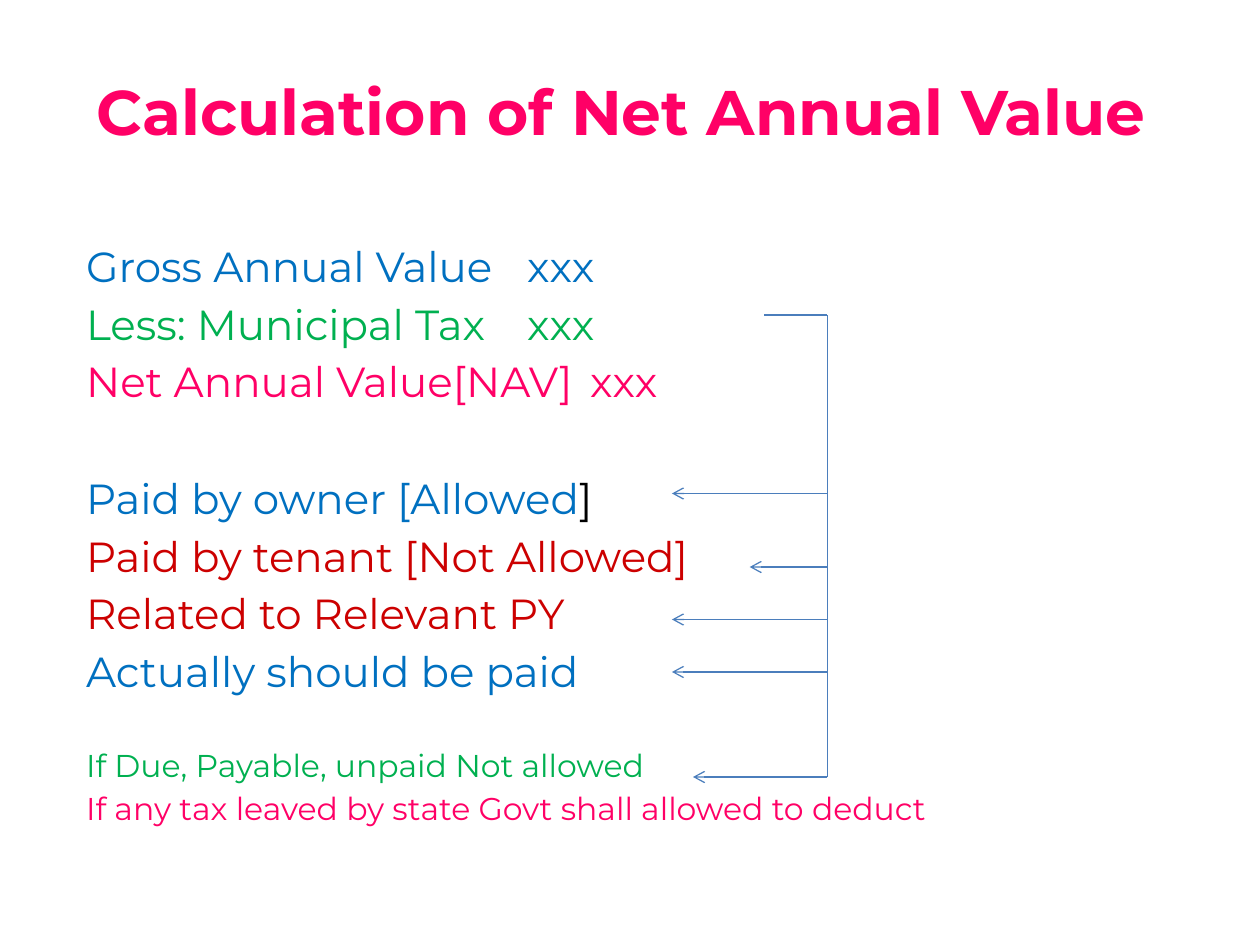
from pptx import Presentation
from pptx.dml.color import RGBColor
from pptx.enum.shapes import MSO_CONNECTOR
from pptx.enum.text import MSO_ANCHOR, MSO_AUTO_SIZE, PP_ALIGN
from pptx.oxml.ns import qn
from pptx.util import Inches, Pt
from lxml import etree

STRAIGHT = MSO_CONNECTOR.STRAIGHT
MIDDLE, TOP = MSO_ANCHOR.MIDDLE, MSO_ANCHOR.TOP
NO_FIT = MSO_AUTO_SIZE.NONE
CENTER, LEFT = PP_ALIGN.CENTER, PP_ALIGN.LEFT

COLUMNS, ROWS = 120, 90
PINK, BLUE, GREEN, RED, BLACK = "FF0066", "0070C0", "00B050", "CC0000", "000000"
BRACKET_BLUE = "4B7EBC"


def colour(value):
    return RGBColor.from_string(value)


def apply(target, values):
    for attribute, value in values.items():
        setattr(target, attribute, value)


class SlideBuilder:
    font_name = "Montserrat"
    line_width = Pt(0.75)

    def __init__(self, deck):
        self.column = deck.slide_width / COLUMNS
        self.row = deck.slide_height / ROWS
        self.slide = deck.slides.add_slide(deck.slide_layouts[1])

    def x(self, columns):
        return round(columns * self.column)

    def y(self, rows):
        return round(rows * self.row)

    def place(self, holder, left, top, width, height, anchor):
        apply(holder, {"left": self.x(left), "top": self.y(top),
                       "width": self.x(width), "height": self.y(height)})
        apply(holder.text_frame, {"word_wrap": True, "auto_size": NO_FIT,
                                  "vertical_anchor": anchor})
        return holder.text_frame

    def run(self, paragraph, text, size, hue, bold=False):
        run = paragraph.add_run()
        run.text = text
        apply(run.font, {"name": self.font_name, "size": Pt(size), "bold": bold})
        run.font.color.rgb = colour(hue)

    def title(self, text, *box):
        heading = self.place(self.slide.shapes.title, *box, MIDDLE).paragraphs[0]
        heading.alignment = CENTER
        self.run(heading, text, 36, PINK, True)

    def body(self, entries, *box):
        frame = self.place(self.slide.placeholders[1], *box, TOP)
        for index, (size, before, tab, pieces) in enumerate(entries):
            entry = frame.paragraphs[0] if index == 0 else frame.add_paragraph()
            apply(entry, {"alignment": LEFT, "space_before": Pt(before)})
            properties = entry._p.get_or_add_pPr()
            properties.set("marL", "0")
            properties.set("indent", "0")
            etree.SubElement(properties, qn("a:buNone"))
            if tab:
                tabs = etree.SubElement(properties, qn("a:tabLst"))
                etree.SubElement(tabs, qn("a:tab"), pos=str(Inches(tab)), algn="l")
            for text, hue in pieces:
                self.run(entry, text, size, hue)

    def line(self, start, end, arrow=False):
        connector = self.slide.shapes.add_connector(
            STRAIGHT, self.x(start[0]), self.y(start[1]), self.x(end[0]), self.y(end[1]))
        connector.line.width = self.line_width
        connector.line.color.rgb = colour(BRACKET_BLUE)
        if arrow:
            etree.SubElement(connector.line._get_or_add_ln(), qn("a:tailEnd"), type="arrow")
        etree.SubElement(connector._element.spPr, qn("a:effectLst"))


def main():
    deck = Presentation()
    apply(deck, {"slide_width": Inches(10), "slide_height": Inches(7.5)})
    builder = SlideBuilder(deck)

    builder.title("Calculation of Net Annual Value ", 6, 3, 108, 15)

    large, small = 24, 18
    gap, small_gap = 4.2, 3.2
    section_gap, note_gap = 37.8, 28.3
    builder.body([
        (large, 0, 4.11, [("Gross Annual Value\txxx", BLUE)]),
        (large, gap, 4.05, [("Less: Municipal Tax\txxx", GREEN)]),
        (large, gap, 4.3, [("Net Annual Value[NAV]\txxx", PINK)]),
        (large, section_gap, None, [("Paid by owner [Allowed", BLUE), ("]", BLACK)]),
        (large, gap, None, [("Paid by tenant [Not Allowed]", RED)]),
        (large, gap, None, [("Related to Relevant PY", RED)]),
        (large, gap, None, [("Actually should be paid", BLUE)]),
        (small, note_gap, None, [("If Due, Payable, unpaid Not allowed", GREEN)]),
        (small, small_gap, None,
         [("If any tax leaved by state Govt shall allowed to deduct", PINK)]),
    ], 7, 22.3, 108, 59.4)

    spine, tax_row, last_row = 78.8, 30, 74
    builder.line((spine - 6, tax_row), (spine, tax_row))
    builder.line((spine, tax_row), (spine, last_row))
    for tip, row in [(64, 47), (71.4, 54), (64, 59), (64, 64), (66, last_row)]:
        builder.line((spine, row), (tip, row), arrow=True)

    deck.save("out.pptx")


if __name__ == "__main__":
    main()
